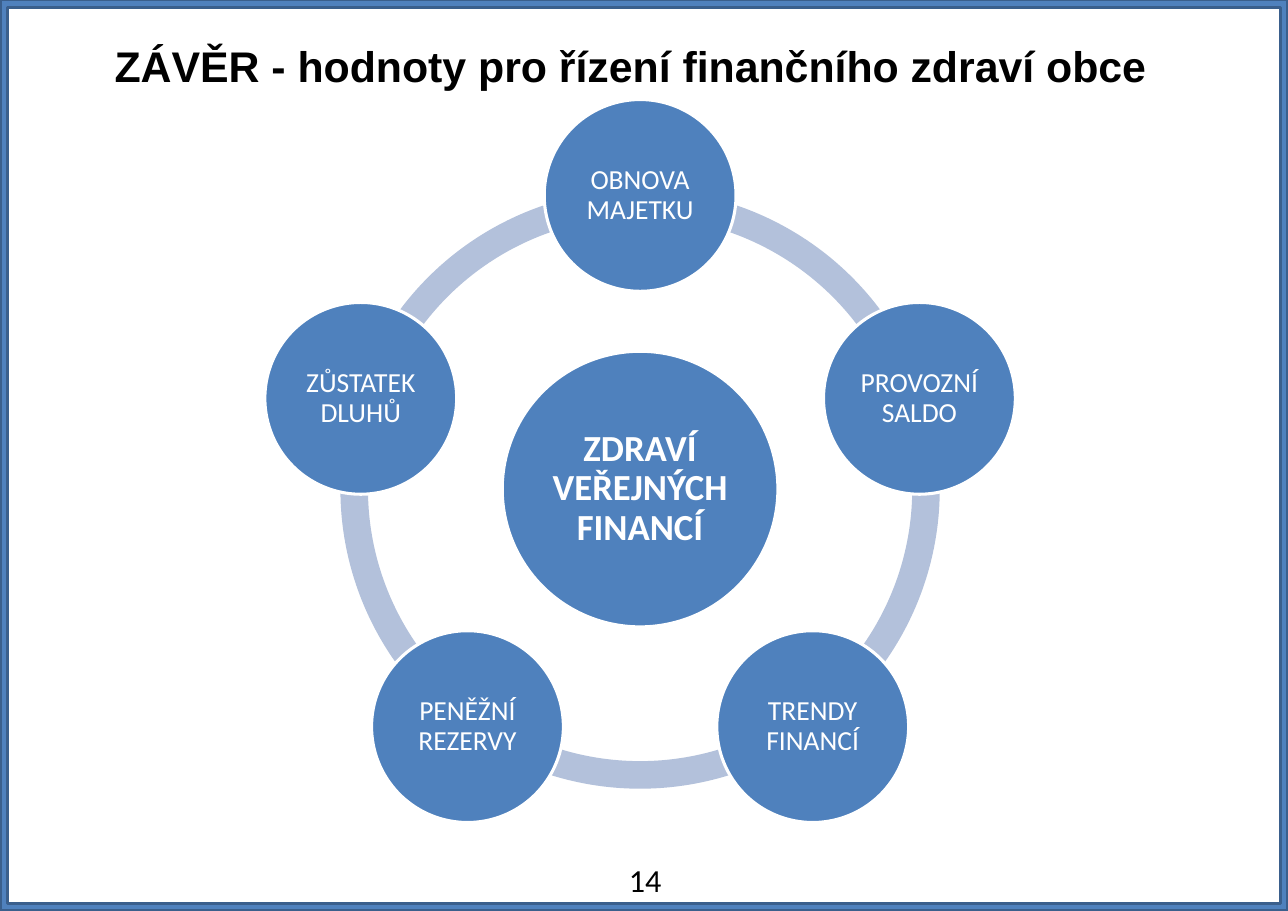
import math

import pptx
import pptx.util
import pptx.dml.color
import pptx.enum.shapes
import pptx.enum.text

Inches = pptx.util.Inches
Pt = pptx.util.Pt
RGBColor = pptx.dml.color.RGBColor
SHAPE = pptx.enum.shapes.MSO_SHAPE
ALIGN = pptx.enum.text.PP_ALIGN
ANCHOR = pptx.enum.text.MSO_ANCHOR

BLUE = RGBColor(0x4F, 0x81, 0xBD)
NAVY = RGBColor(0x3A, 0x5F, 0x8C)
PALE = RGBColor(0xB3, 0xC1, 0xDB)
WHITE = RGBColor(0xFF, 0xFF, 0xFF)
BLACK = RGBColor(0, 0, 0)

WIDTH, HEIGHT = 11.69, 8.27
VALUES = ["OBNOVA MAJETKU", "PROVOZNÍ SALDO", "TRENDY FINANCÍ",
          "PENĚŽNÍ REZERVY", "ZŮSTATEK DLUHŮ"]


def set_font(par, name, size, color, bold=False):
    for run in par.runs:
        run.font.name = name
        run.font.size = Pt(size)
        run.font.bold = bold
        run.font.color.rgb = color


def add_shape(slide, kind, box, fill, line=None):
    shape = slide.shapes.add_shape(kind, *map(Inches, box))
    shape.shadow.inherit = False
    shape.fill.solid()
    shape.fill.fore_color.rgb = fill
    if line is None:
        shape.line.fill.background()
    else:
        shape.line.color.rgb = line
        shape.line.width = Pt(2)
    return shape


def add_frame(slide, box):
    frame = add_shape(slide, SHAPE.FRAME, box, BLUE, NAVY)
    frame.adjustments[0] = 0.008


def add_title(slide, box, text):
    title = slide.shapes.title
    title.left, title.top, title.width, title.height = map(Inches, box)
    frame = title.text_frame
    frame.text = text
    frame.word_wrap = True
    frame.vertical_anchor = ANCHOR.MIDDLE
    frame.margin_left = frame.margin_right = 0
    frame.margin_top = frame.margin_bottom = 0
    par = frame.paragraphs[0]
    par.alignment = ALIGN.LEFT
    set_font(par, "Arial", 28, BLACK, True)


def add_number(slide, box, text):
    frame = slide.shapes.add_textbox(*map(Inches, box)).text_frame
    frame.text = text
    frame.word_wrap = True
    set_font(frame.paragraphs[0], "Calibri", 21, BLACK)


def add_disc(slide, x, y, size, text, points, bold=False):
    """Draw a labelled circle centred on x, y."""
    box = (x - size / 2, y - size / 2, size, size)
    disc = add_shape(slide, SHAPE.OVAL, box, BLUE, WHITE)
    frame = disc.text_frame
    frame.text = text
    frame.word_wrap = True
    frame.vertical_anchor = ANCHOR.MIDDLE
    frame.margin_left = frame.margin_right = Inches(0.03)
    frame.margin_top = frame.margin_bottom = Inches(0.03)
    par = frame.paragraphs[0]
    par.alignment = ALIGN.CENTER
    par.line_spacing = 0.9
    set_font(par, "Calibri", points, WHITE, bold)


def add_cycle(slide, box, core, labels):
    """Place the labels clockwise from the top of a ring that fills the box."""
    left, top, width, height = box
    x, y = left + width / 2, top + height / 2
    step = 360 / len(labels)
    starts = [(270 + step * i) % 360 for i in range(len(labels))]
    for start in starts:
        arc = add_shape(slide, SHAPE.BLOCK_ARC, box, PALE)
        # Angles are stored in 1/60000 degree, adjustments in 1/100000.
        arc.adjustments[0] = start * 0.6
        arc.adjustments[1] = (start + step) % 360 * 0.6
        arc.adjustments[2] = 0.046
    add_disc(slide, x, y, width * 0.46, core, 24, True)
    reach = width * 0.49
    for start, label in zip(starts, labels):
        turn = math.radians(start)
        add_disc(slide, x + reach * math.cos(turn),
                 y + reach * math.sin(turn), width * 0.32, label, 18)


def main():
    deck = pptx.Presentation()
    deck.slide_width = Inches(WIDTH)
    deck.slide_height = Inches(HEIGHT)
    slide = deck.slides.add_slide(deck.slide_layouts.get_by_name("Title Only"))
    add_frame(slide, (0, 0, WIDTH, HEIGHT))
    add_title(slide, (1.04, 0.2, 9.49, 0.79),
              "ZÁVĚR - hodnoty pro řízení finančního zdraví obce")
    add_cycle(slide, (3.09, 1.72, 5.44, 5.44),
              "ZDRAVÍ VEŘEJNÝCH FINANCÍ", VALUES)
    add_number(slide, (5.61, 7.76, 0.57, 0.27), "14")
    deck.save("out.pptx")


if __name__ == "__main__":
    main()
